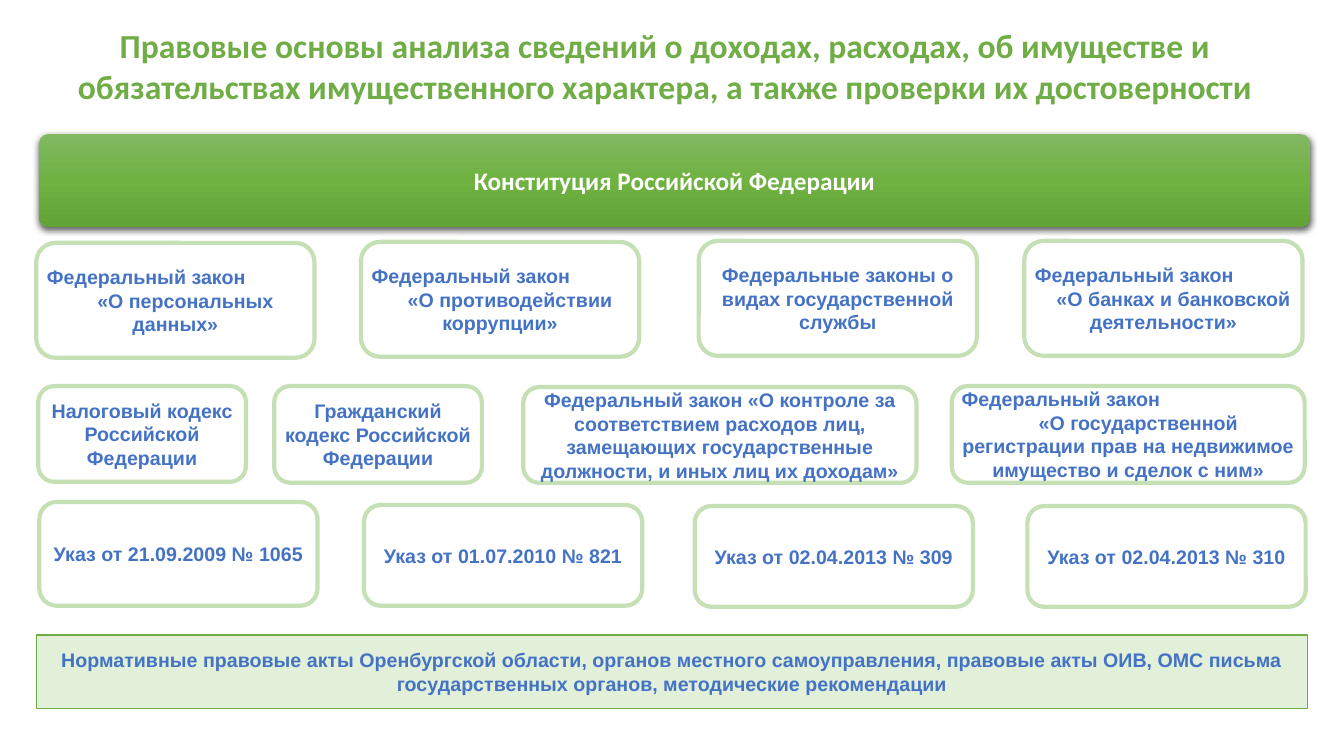
from dataclasses import dataclass

from pptx import Presentation
from pptx.dml.color import RGBColor
from pptx.enum.shapes import MSO_SHAPE
from pptx.enum.text import MSO_ANCHOR, PP_ALIGN
from pptx.oxml import parse_xml
from pptx.oxml.ns import nsdecls, qn
from pptx.util import Inches, Pt


@dataclass(frozen=True)
class Theme:
    """Colours, fonts and type sizes of the slide."""
    green: str = "70AD47"
    pale_green: str = "E2F0D9"
    outline: str = "C5E0B4"
    blue: str = "4472C4"
    white: str = "FFFFFF"
    shadow: str = "000000"
    gradient: tuple = ((0, "81B861"), (50, "6FB242"), (100, "62A336"))
    heading_font: str = "Calibri"
    body_font: str = "Arial"
    title_size: int = 24
    banner_size: int = 18
    body_size: int = 14


@dataclass(frozen=True)
class Box:
    """A rectangle in inches."""
    left: float
    top: float
    width: float
    height: float

    def lengths(self):
        """Return the four sides as slide lengths."""
        return [Inches(side) for side in (self.left, self.top, self.width, self.height)]


THEME = Theme()
LAW = "Федеральный закон"

LAWS = (
    (0, 0.02, 2.76, 1.14, (LAW, "«О персональных данных»")),
    (3.22, 0.01, 2.76, 1.14, (LAW, "«О противодействии коррупции»")),
    (6.57, 0, 2.76, 1.14, ("Федеральные законы о видах государственной службы",)),
    (9.8, 0, 2.76, 1.14, (LAW, "«О банках и банковской деятельности»")),
)
CODES = (
    (0.02, 0, 2.06, 0.95, ("Налоговый кодекс Российской Федерации",)),
    (2.36, 0, 2.06, 0.96, ("Гражданский кодекс Российской Федерации",)),
    (4.83, 0.01, 3.9, 0.95, (
        "Федеральный закон «О контроле за соответствием расходов лиц, "
        "замещающих государственные должности, и иных лиц их доходам»",)),
    (9.08, 0, 3.5, 0.96, (
        LAW, "«О государственной регистрации прав на недвижимое имущество и сделок с ним»")),
)
DECREES = (
    (0.03, 0, 2.76, 1.03, ("Указ от 21.09.2009 № 1065",)),
    (3.25, 0.03, 2.76, 1, ("Указ от 01.07.2010 № 821",)),
    (6.53, 0.04, 2.76, 1, ("Указ от 02.04.2013 № 309",)),
    (9.83, 0.04, 2.76, 1, ("Указ от 02.04.2013 № 310",)),
)


def write(shape, *texts, size=THEME.body_size, font=THEME.body_font, color=THEME.blue,
          anchor=MSO_ANCHOR.MIDDLE, insets=(0.1, 0.05)):
    """Write bold centred text; of two paragraphs the first is a left-aligned lead-in."""
    frame = shape.text_frame
    frame.word_wrap = True
    frame.vertical_anchor = anchor
    frame.margin_left = frame.margin_right = Inches(insets[0])
    frame.margin_top = frame.margin_bottom = Inches(insets[1])
    for index, text in enumerate(texts):
        para = frame.add_paragraph() if index else frame.paragraphs[0]
        is_lead = index == 0 and len(texts) > 1
        para.alignment = PP_ALIGN.LEFT if is_lead else PP_ALIGN.CENTER
        if index:
            properties = para._p.get_or_add_pPr()
            properties.set("marL", "0")
            properties.set("indent", str(Inches(0.2)))
        span = para.add_run()
        span.text = text
        span.font.size = Pt(size)
        span.font.name = font
        span.font.bold = True
        span.font.color.rgb = RGBColor.from_string(color)


def add_panel(page, box, kind, fill=None, line=None, weight=1):
    """Add a shadowless shape with an optional fill and outline."""
    shape = page.shapes.add_shape(kind, *box.lengths())
    shape.shadow.inherit = False
    if fill:
        shape.fill.solid()
        shape.fill.fore_color.rgb = RGBColor.from_string(fill)
    else:
        shape.fill.background()
    if line:
        shape.line.color.rgb = RGBColor.from_string(line)
        shape.line.width = Pt(weight)
    else:
        shape.line.fill.background()
    return shape


def add_title(page, box):
    """Add the slide heading."""
    write(page.shapes.add_textbox(*box.lengths()),
          "Правовые основы анализа сведений о доходах, расходах, об имуществе и "
          "обязательствах имущественного характера, а также проверки их достоверности",
          size=THEME.title_size, font=THEME.heading_font, color=THEME.green,
          anchor=MSO_ANCHOR.TOP)


def add_banner(page, box):
    """Add the constitution banner with its gradient and shadow."""
    banner = add_panel(page, box, MSO_SHAPE.ROUNDED_RECTANGLE, fill=THEME.green)
    banner.adjustments[0] = 0.1
    stops = "".join(f'<a:gs pos="{place * 1000}"><a:srgbClr val="{color}"/></a:gs>'
                    for place, color in THEME.gradient)
    properties = banner._element.spPr
    solid = properties.find(qn("a:solidFill"))
    properties.replace(solid, parse_xml(
        f'<a:gradFill {nsdecls("a")} rotWithShape="1"><a:gsLst>{stops}</a:gsLst>'
        '<a:lin ang="5400000" scaled="0"/></a:gradFill>'))
    properties.find(qn("a:effectLst")).append(parse_xml(
        f'<a:outerShdw {nsdecls("a")} blurRad="{Pt(4.5)}" dist="{Pt(1.5)}" dir="5400000" '
        f'algn="ctr" rotWithShape="0"><a:srgbClr val="{THEME.shadow}">'
        '<a:alpha val="63000"/></a:srgbClr></a:outerShdw>'))
    write(banner, "Конституция Российской Федерации", size=THEME.banner_size,
          font=THEME.heading_font, color=THEME.white, insets=(0.07, 0.07))


def add_card_row(page, box, cards):
    """Add a row of outlined cards offset from the corner of the box."""
    for offset, drop, width, height, texts in cards:
        place = Box(box.left + offset, box.top + drop, width, height)
        card = add_panel(page, place, MSO_SHAPE.ROUNDED_RECTANGLE,
                         line=THEME.outline, weight=3)
        card.adjustments[0] = 0.167
        write(card, *texts, insets=(0.05, 0.05))


def add_footer(page, box):
    """Add the bar with regional acts and recommendations."""
    footer = add_panel(page, box, MSO_SHAPE.RECTANGLE, fill=THEME.pale_green, line=THEME.green)
    write(footer, "Нормативные правовые акты Оренбургской области, органов местного "
                  "самоуправления, правовые акты ОИВ, ОМС письма государственных органов, "
                  "методические рекомендации")


def main():
    """Build the slide and save the deck."""
    deck = Presentation()
    deck.slide_width, deck.slide_height = Inches(13.33), Inches(7.5)
    page = deck.slides.add_slide(deck.slide_layouts[6])
    add_title(page, Box(0.46, 0.2, 12.27, 0.91))
    add_banner(page, Box(0.39, 1.33, 12.6, 0.92))
    add_card_row(page, Box(0.36, 2.39, 12.61, 1.16), LAWS)
    add_card_row(page, Box(0.36, 3.83, 12.61, 0.96), CODES)
    add_card_row(page, Box(0.36, 4.98, 12.61, 1.04), DECREES)
    add_footer(page, Box(0.36, 6.3, 12.61, 0.73))
    deck.save("out.pptx")


if __name__ == "__main__":
    main()
